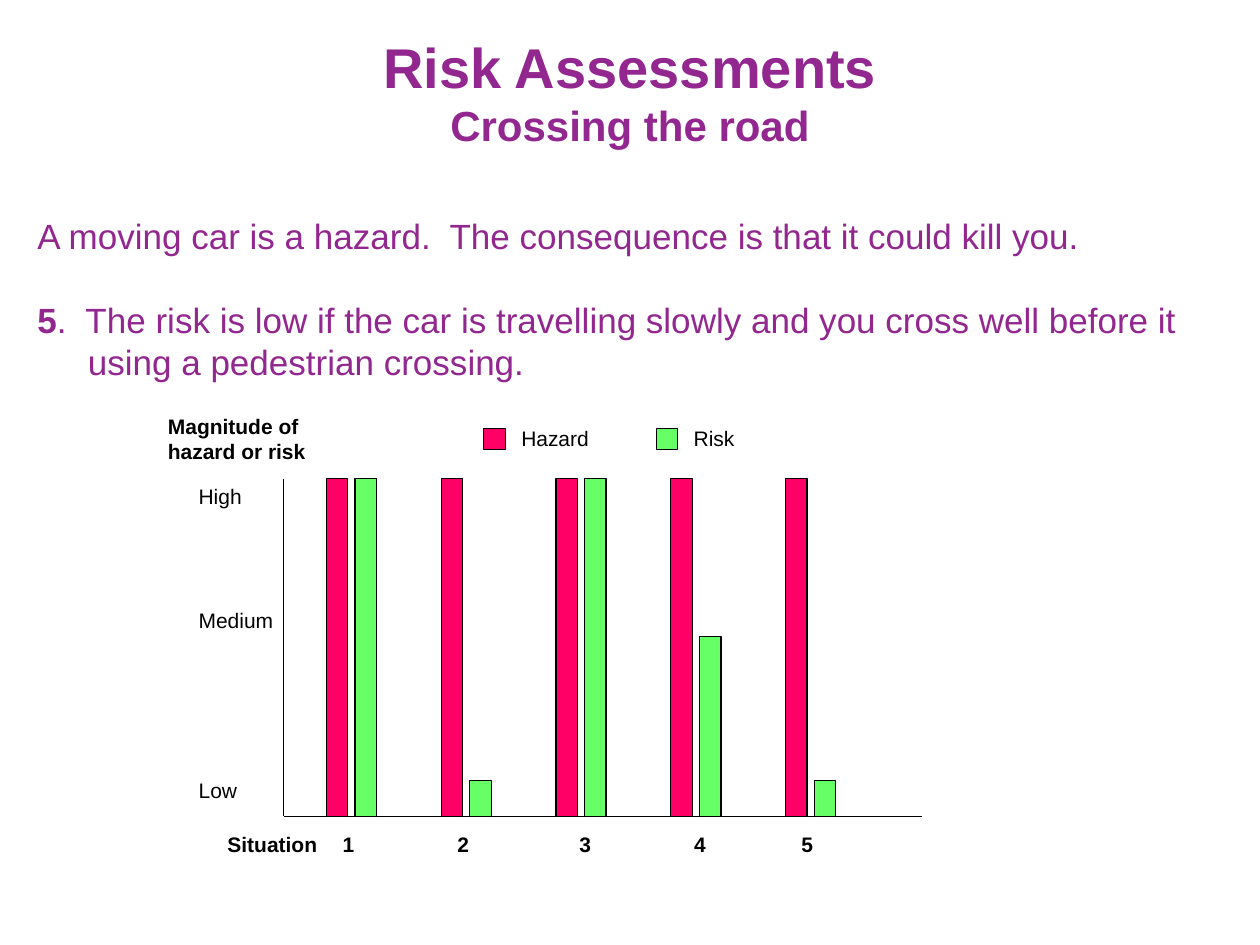
"""Build the slide on the hazard and risk of crossing a road."""
import lxml.etree
import pptx
import pptx.dml.color
import pptx.enum.shapes
import pptx.enum.text
import pptx.oxml.ns
import pptx.util

Pt = pptx.util.Pt
HUES = {"ink": "000000", "title": "92278F", "hazard": "FF0066", "risk": "66FF66"}
FORMS = {
    "head": {"size": Pt(32), "bold": True},
    "sub": {"size": Pt(24), "bold": True},
    "body": {"size": Pt(20), "bold": False},
    "lead": {"size": Pt(20), "bold": True},
    "label": {"size": Pt(12), "bold": False},
    "strong": {"size": Pt(12), "bold": True},
}
LEFT, TOP, BASE, RIGHT = 162, 273.6, 466.5, 527
WIDE, STEP, START, SHIFT = 12.3, 65.6, 186.5, 16.4
FULL = BASE - TOP
LOW, MID = 20.6, 102.6
BARS = {"hazard": [FULL] * 5, "risk": [FULL, LOW, FULL, MID, LOW]}


class Maker:
    """Hold the font and the slide, and add each kind of element."""

    def __init__(self, deck):
        self.face = "Arial"
        self.slide = deck.slides.add_slide(deck.slide_layouts[1])
        self.shapes = self.slide.shapes

    def color(self, name):
        return pptx.dml.color.RGBColor.from_string(HUES[name])

    def add_text(self, para, text, form, hue):
        run = para.add_run()
        run.text = text
        for key, value in {"name": self.face, **FORMS[form]}.items():
            setattr(run.font, key, value)
        run.font.color.rgb = self.color(hue)

    def fill(self, holder, box, paras, align, hang=0):
        for key, value in zip(("left", "top", "width", "height"), box):
            setattr(holder, key, Pt(value))
        frame = holder.text_frame
        values = {
            "word_wrap": True,
            "auto_size": pptx.enum.text.MSO_AUTO_SIZE.NONE,
            "vertical_anchor": pptx.enum.text.MSO_ANCHOR.TOP,
        }
        for key, value in values.items():
            setattr(frame, key, value)
        for i, (gap, runs) in enumerate(paras):
            para = frame.add_paragraph() if i else frame.paragraphs[0]
            para.alignment = align
            para.space_before = Pt(gap)
            props = para._p.get_or_add_pPr()
            props.set("marL", str(Pt(hang)))
            props.set("indent", str(-Pt(hang)))
            lxml.etree.SubElement(props, pptx.oxml.ns.qn("a:buNone"))
            for text, form in runs:
                self.add_text(para, text, form, "title")

    def label(self, x, y, wide, lines, form="label"):
        high = 21 if len(lines) == 1 else 36.5
        frame = self.shapes.add_textbox(Pt(x), Pt(y), Pt(wide), Pt(high)).text_frame
        values = {"word_wrap": True, "margin_left": Pt(5), "margin_right": Pt(5),
                  "margin_top": Pt(2.4), "margin_bottom": Pt(2.4)}
        for key, value in values.items():
            setattr(frame, key, value)
        for i, line in enumerate(lines):
            para = frame.add_paragraph() if i else frame.paragraphs[0]
            self.add_text(para, line, form, "ink")

    def line(self, *ends):
        kind = pptx.enum.shapes.MSO_CONNECTOR.STRAIGHT
        line = self.shapes.add_connector(kind, *map(Pt, ends))
        line.line.color.rgb = self.color("ink")
        line.line.width = Pt(0.75)
        lxml.etree.SubElement(line._element.spPr, pptx.oxml.ns.qn("a:effectLst"))

    def block(self, x, y, high, hue):
        kind = pptx.enum.shapes.MSO_SHAPE.RECTANGLE
        block = self.shapes.add_shape(kind, Pt(x), Pt(y), Pt(WIDE), Pt(high))
        block.shadow.inherit = False
        block.fill.solid()
        block.fill.fore_color.rgb = self.color(hue)
        block.line.color.rgb = self.color("ink")
        block.line.width = Pt(0.75)


def main():
    deck = pptx.Presentation()
    deck.slide_width, deck.slide_height = Pt(720), Pt(540)
    make = Maker(deck)
    align = pptx.enum.text.PP_ALIGN

    make.fill(make.shapes.title, (211.5, 15.1, 297, 74.2), [
        (0, [("Risk Assessments", "head")]),
        (0, [("Crossing the road", "sub")]),
    ], align.CENTER)
    make.fill(make.slide.placeholders[1], (14.2, 118.8, 692, 127.4), [
        (0, [("A moving car is a hazard.  The consequence is that it could kill you.",
              "body")]),
        (24, [("5", "lead"),
              (".  The risk is low if the car is travelling slowly and you cross "
               "well before it using a pedestrian crossing.", "body")]),
    ], align.LEFT, 28.8)

    make.line(LEFT, TOP, LEFT, BASE)
    make.line(LEFT, BASE, RIGHT, BASE)
    for text, y in (("High", TOP), ("Medium", 345), ("Low", 442)):
        make.label(108.5, y, 71, [text])
    make.label(91, 234, 114, ["Magnitude of", "hazard or risk"], "strong")
    make.label(125, 472.5, 77, ["Situation"], "strong")
    for i, x in enumerate((190.8, 256.3, 326, 391.7, 453)):
        make.label(x, 472.5, 18, [str(i + 1)], "strong")

    for i, (hue, highs) in enumerate(BARS.items()):
        for j, high in enumerate(highs):
            make.block(START + i * SHIFT + j * STEP, BASE - high, high, hue)
        x = 276.5 + i * 98.5
        make.block(x, 244.8, WIDE, hue)
        make.label(x + 16.4, 240.5, 67, [hue.title()])
    deck.save("out.pptx")


if __name__ == "__main__":
    main()
